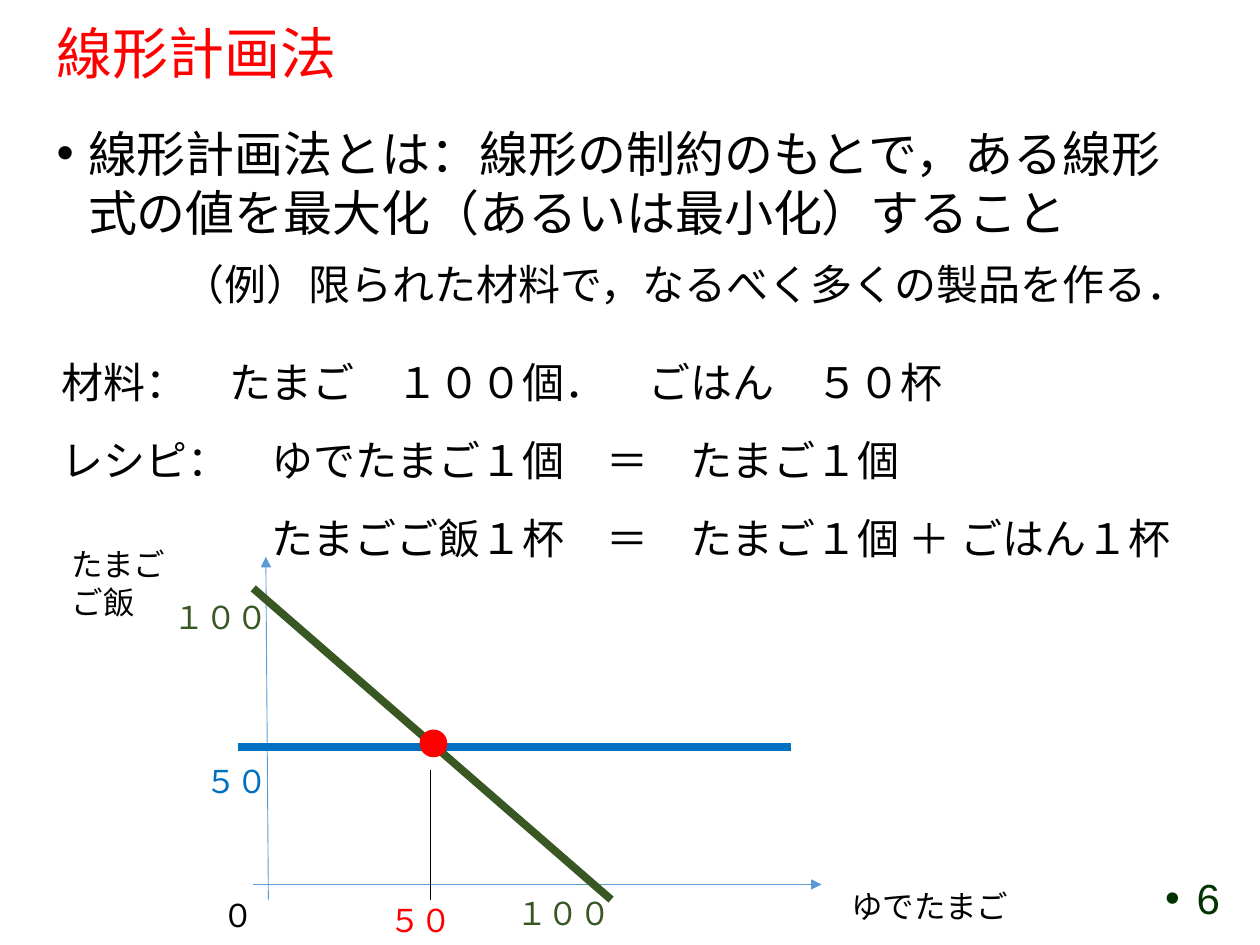
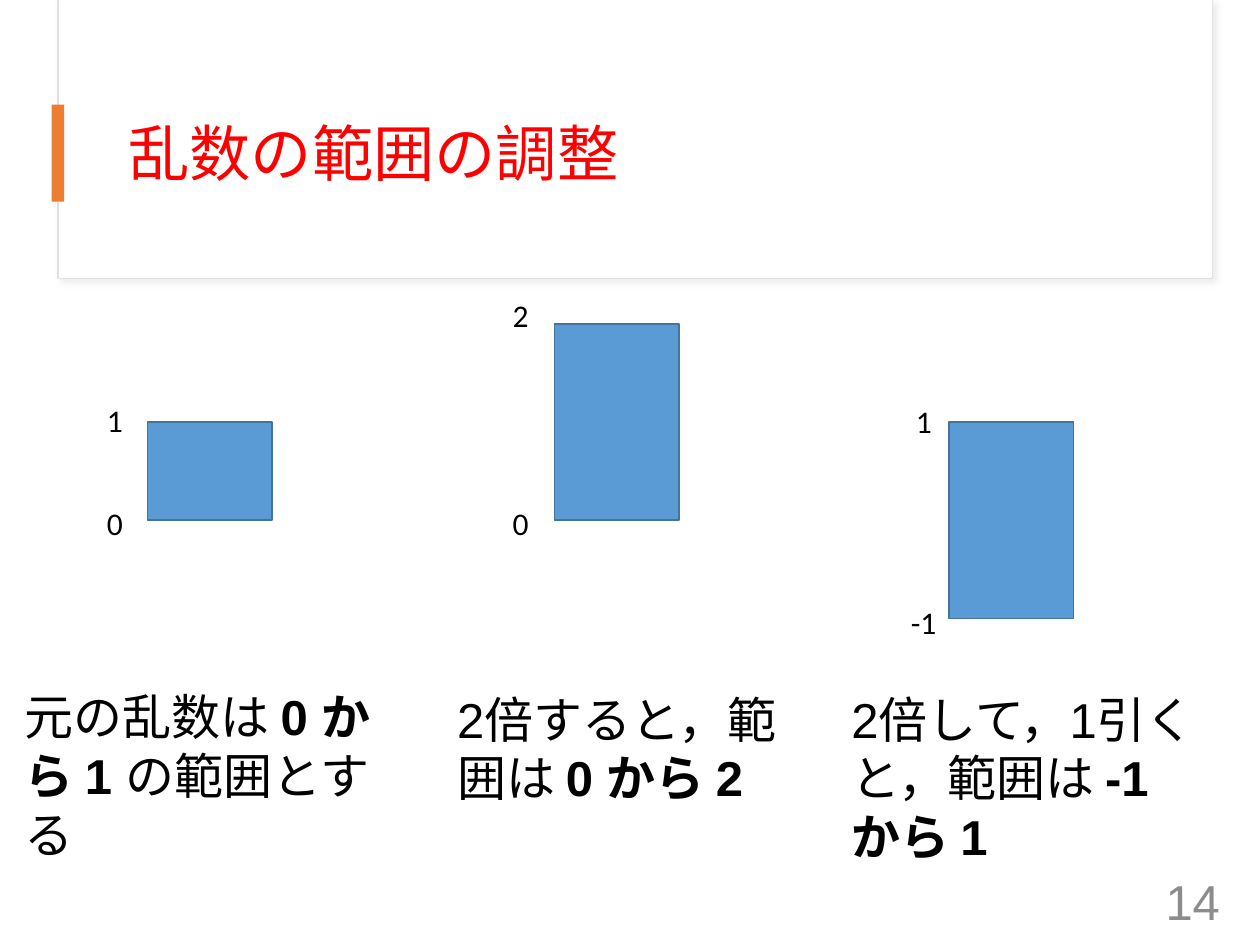
from dataclasses import dataclass

import lxml.etree
import pptx
import pptx.dml.color
import pptx.enum.shapes
import pptx.enum.text
import pptx.oxml.ns
import pptx.util

Inches, Pt = pptx.util.Inches, pptx.util.Pt
SHAPE = pptx.enum.shapes.MSO_SHAPE
ANCHOR = pptx.enum.text.MSO_ANCHOR
ALIGN = pptx.enum.text.PP_ALIGN
qn = pptx.oxml.ns.qn


@dataclass(frozen=True)
class Theme:
    font: str = "Arial"
    label_font: str = "Calibri"
    black: str = "000000"
    white: str = "FFFFFF"
    red: str = "FF0000"
    green: str = "385723"
    page_green: str = "003300"
    page_gray: str = "8C8C8C"
    blue: str = "0070C0"
    sky: str = "5B9BD5"
    bar_line: str = "43739E"
    orange: str = "ED7D31"
    border: str = "E1E1E1"
    shade: str = "D9D9D9"
    body: int = 28
    detail: int = 24
    label: int = 18


def rgb(color):
    return pptx.dml.color.RGBColor.from_string(color)


class Deck:
    """Holds the presentation, its theme and the slide being drawn."""

    def __init__(self, theme):
        self.theme = theme
        self.prs = pptx.Presentation()
        self.prs.slide_width, self.prs.slide_height = Inches(10), Inches(7.5)

    def add_slide(self):
        self.s = self.prs.slides.add_slide(self.prs.slide_layouts[6])

    def text(self, box, paragraphs, size, color=None, font=None, wrap=True,
             anchor=ANCHOR.TOP, bullet=False, **formats):
        sp = self.s.shapes.add_textbox(*map(Inches, box))
        tf = sp.text_frame
        tf.word_wrap, tf.vertical_anchor = wrap, anchor
        for i, content in enumerate(paragraphs):
            p = tf.paragraphs[0] if i == 0 else tf.add_paragraph()
            if bullet and i == 0:
                self.bullet(p)
            for name, value in formats.items():
                if i or name != "space_before":
                    setattr(p, name, value)
            runs = [(content, False)] if isinstance(content, str) else content
            for words, bold in runs:
                r = p.add_run()
                r.text = words
                style = {"name": font or self.theme.font, "size": Pt(size), "bold": bold}
                for name, value in style.items():
                    setattr(r.font, name, value)
                r.font.color.rgb = rgb(color or self.theme.black)
        return tf

    def bullet(self, p):
        self.indent(p, 0.25, -0.25)
        pPr = p._p.get_or_add_pPr()
        lxml.etree.SubElement(pPr, qn("a:buFont"), typeface="Arial")
        lxml.etree.SubElement(pPr, qn("a:buChar"), char="•")

    def indent(self, p, left, first=0):
        pPr = p._p.get_or_add_pPr()
        pPr.set("marL", str(Inches(left)))
        pPr.set("indent", str(Inches(first)))

    def title(self, box, words, size):
        self.text(box, [words], size, self.theme.red, anchor=ANCHOR.MIDDLE, line_spacing=0.9)

    def page_number(self, number, size, color, **formats):
        self.text((7.53, 6.95, 2.25, 0.4), [number], size, color,
                  anchor=ANCHOR.MIDDLE, alignment=ALIGN.RIGHT, **formats)

    def label(self, left, top, width, *lines, color=None, font=None):
        height = 0.4 if len(lines) == 1 else 0.71
        self.text((left, top, width, height), lines, self.theme.label, color, font, wrap=False)

    def shape(self, kind, box, fill, line=None, width=1):
        sp = self.s.shapes.add_shape(kind, *map(Inches, box))
        sp.shadow.inherit = False
        sp.fill.solid()
        sp.fill.fore_color.rgb = rgb(fill)
        if line:
            sp.line.color.rgb = rgb(line)
            sp.line.width = Pt(width)
        else:
            sp.line.fill.background()
        return sp

    def cast_shadow(self, sp, color, alpha, blur, distance, angle):
        effects = sp._element.spPr.find(qn("a:effectLst"))
        shadow = lxml.etree.SubElement(
            effects, qn("a:outerShdw"), blurRad=str(Pt(blur)), dist=str(Pt(distance)),
            dir=str(angle * 60000), algn="tl", rotWithShape="0")
        clr = lxml.etree.SubElement(shadow, qn("a:srgbClr"), val=color)
        lxml.etree.SubElement(clr, qn("a:alpha"), val=str(alpha * 1000))

    def line(self, start, end, color, width=0.5, arrow=False):
        cxn = self.s.shapes.add_connector(
            pptx.enum.shapes.MSO_CONNECTOR.STRAIGHT, *map(Inches, start + end))
        cxn.line.color.rgb = rgb(color)
        cxn.line.width = Pt(width)
        if arrow:
            lxml.etree.SubElement(cxn.line._get_or_add_ln(), qn("a:tailEnd"), type="triangle")
        lxml.etree.SubElement(cxn._element.spPr, qn("a:effectLst"))


def linear_programming(deck):
    t = deck.theme
    deck.add_slide()
    deck.title((0.35, 0.19, 9.25, 0.51), "線形計画法", 32)
    tf = deck.text(
        (0.35, 0.93, 9.25, 5.83),
        ["線形計画法とは：線形の制約のもとで，ある線形式の値を最大化（あるいは最小化）すること",
         "（例）限られた材料で，なるべく多くの製品を作る．"],
        t.body, bullet=True, space_before=Pt(10))
    example = tf.paragraphs[1]
    deck.indent(example, 1)
    example.runs[0].font.size = Pt(t.detail)
    deck.page_number("6", t.detail, t.page_green, bullet=True, line_spacing=0.9)
    tf = deck.text(
        (0.39, 2.7, 9.46, 1.52),
        ["材料：　たまご　１００個．　ごはん　５０杯",
         "レシピ：　ゆでたまご１個　＝　たまご１個",
         "たまごご飯１杯　＝　たまご１個 ＋ ごはん１杯"],
        t.detail, line_spacing=1.2, space_before=Pt(10))
    deck.indent(tf.paragraphs[2], 1.67)

    deck.line((2.01, 7.02), (6.52, 7.02), t.sky, arrow=True)
    deck.line((2.13, 7.14), (2.11, 4.42), t.sky, arrow=True)
    deck.label(6.66, 6.99, 1.46, "ゆでたまご")
    deck.label(0.47, 4.28, 0.96, "たまご", "ご飯")
    deck.line((1.89, 5.93), (6.28, 5.93), t.blue, 4.5)
    deck.label(1.53, 6, 0.71, "５０", color=t.blue)
    deck.line((2.01, 4.67), (4.85, 7.14), t.green, 4.5)
    for left, top in ((4, 7.05), (1.28, 4.7)):
        deck.label(left, top, 0.96, "１００", color=t.green)
    deck.shape(SHAPE.OVAL, (3.33, 5.79, 0.22, 0.22), t.red)
    deck.line((3.42, 6.11), (3.42, 7.14), t.black)
    deck.label(2.99, 7.1, 0.71, "５０", color=t.red)
    deck.label(1.67, 7.06, 0.45, "０")


def random_range(deck):
    t = deck.theme
    deck.add_slide()
    panel = deck.shape(SHAPE.RECTANGLE, (0.46, 0, 9.16, 2.21), t.white, t.border, 0.75)
    deck.cast_shadow(panel, t.shade, alpha=50, blur=4, distance=3, angle=45)
    deck.shape(SHAPE.RECTANGLE, (0.47, 0, 9.15, 2.2), t.white)
    deck.title((0.92, 0.6, 8.34, 1.29), "乱数の範囲の調整", 35)
    deck.shape(SHAPE.RECTANGLE, (0.41, 0.83, 0.1, 0.77), t.orange)
    deck.page_number("14", t.body, t.page_gray)

    zero, unit = 4.13, 0.78
    bars = [(1.17, 0, 1, (0.75, 3.95), (0.75, 3.13)),
            (4.4, 0, 2, (3.97, 3.95), (3.97, 2.3)),
            (7.53, -1, 1, (7.13, 4.74), (7.17, 3.14))]
    for left, low, high, low_at, high_at in bars:
        box = (left, zero - high * unit, 0.99, (high - low) * unit)
        deck.shape(SHAPE.RECTANGLE, box, t.sky, t.bar_line)
        for value, at in ((low, low_at), (high, high_at)):
            deck.label(*at, 0.41 if value < 0 else 0.33, str(value), font=t.label_font)

    captions = [
        ((0.1, 5.4, 3.2, 1.73),
         [("元の乱数は ", False), ("0 から 1 ", True), ("の範囲とする", False)]),
        ((3.53, 5.42, 3.04, 1.73), [("2倍すると，範囲は ", False), ("0 から 2", True)]),
        ((6.66, 5.42, 3.04, 1.73), [("2倍して，1引くと，範囲は ", False), ("-1 から 1", True)]),
    ]
    for box, runs in captions:
        deck.text(box, [runs], t.body)


def main():
    deck = Deck(Theme())
    linear_programming(deck)
    random_range(deck)
    deck.prs.save("out.pptx")


if __name__ == "__main__":
    main()
